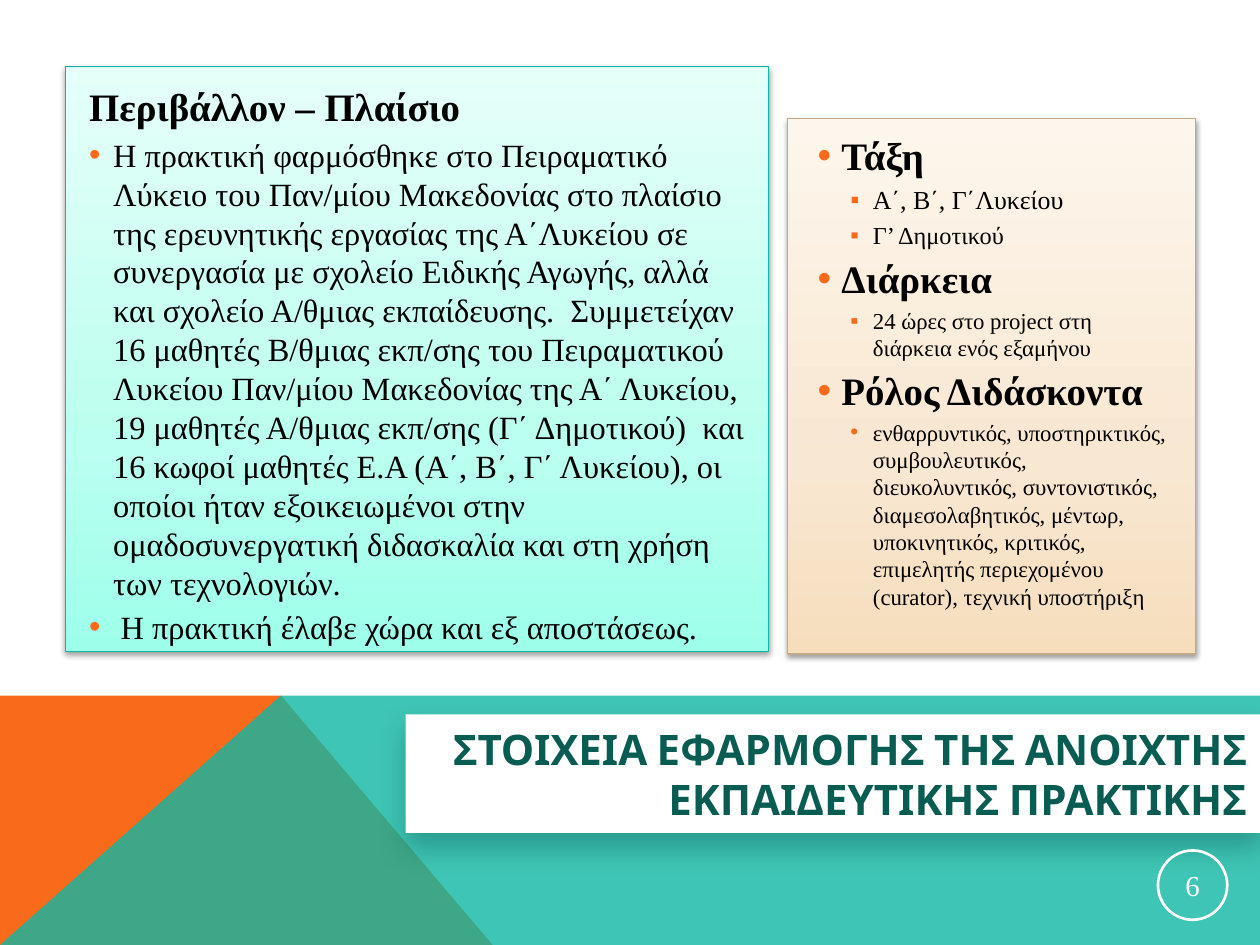
from lxml import etree
from pptx import Presentation
from pptx.dml.color import RGBColor
from pptx.enum.shapes import MSO_SHAPE
from pptx.enum.text import MSO_ANCHOR, PP_ALIGN
from pptx.oxml import parse_xml
from pptx.oxml.ns import nsdecls, qn
from pptx.util import Inches, Pt

RECTANGLE, OVAL = MSO_SHAPE.RECTANGLE, MSO_SHAPE.OVAL
MIDDLE, TOP = MSO_ANCHOR.MIDDLE, MSO_ANCHOR.TOP
LEFT, CENTER, RIGHT = PP_ALIGN.LEFT, PP_ALIGN.CENTER, PP_ALIGN.RIGHT
COLORS = {
    "orange": "F96A1B", "teal": "10B7A3", "teal line": "0CB7A3", "dark teal": "085C52",
    "sand line": "BFA989", "white": "FFFFFF", "black": "000000",
}
MINT = ("9DFFEA", "BAFFEF", "E5FFF9")
SAND = ("F6DEBD", "F8E7D1", "FDF6EC")
SERIF, SANS = "Times New Roman", "Cabin"

presentation = Presentation()
presentation.slide_width, presentation.slide_height = Inches(10), Inches(7.5)
slide = presentation.slides.add_slide(presentation.slide_layouts[6])
# Grid of 100 columns by 75 rows
column = presentation.slide_width // 100
row = presentation.slide_height // 75


def add_block(kind, left, top, width, height, fill=None, line=None, line_width=0.75, shadow=None):
    """Add a shape on the grid; fill is a colour name or gradient stops from the bottom up,
    shadow is (colour name, opacity in percent, blur in points, distance in points)."""
    shape = slide.shapes.add_shape(
        kind, int(left * column), int(top * row), int(width * column), int(height * row))
    shape.shadow.inherit = False
    if isinstance(fill, tuple):
        stops = "".join(
            f'<a:gs pos="{position}000"><a:srgbClr val="{color}"/></a:gs>'
            for position, color in zip((0, 35, 100), fill))
        shape._element.spPr.find(qn("a:prstGeom")).addnext(parse_xml(
            f'<a:gradFill {nsdecls("a")} rotWithShape="1"><a:gsLst>{stops}</a:gsLst>'
            '<a:lin ang="16200000" scaled="0"/></a:gradFill>'))
    elif fill:
        shape.fill.solid()
        shape.fill.fore_color.rgb = RGBColor.from_string(COLORS[fill])
    else:
        shape.fill.background()
    if line:
        shape.line.color.rgb = RGBColor.from_string(COLORS[line])
        shape.line.width = Pt(line_width)
    else:
        shape.line.fill.background()
    if shadow:
        color, opacity, blur, distance = shadow
        shape._element.spPr.find(qn("a:effectLst")).append(parse_xml(
            f'<a:outerShdw {nsdecls("a")} blurRad="{Pt(blur)}" dist="{Pt(distance)}" '
            f'dir="5400000" rotWithShape="0"><a:srgbClr val="{COLORS[color]}">'
            f'<a:alpha val="{opacity}000"/></a:srgbClr></a:outerShdw>'))
    return shape


def write(frame, text, size, bold=False, font=SERIF, color="black", align=LEFT, anchor=TOP,
          bullet=None, indent=0.0, hanging=0.0):
    """Write the next paragraph of a text frame; indents are in inches."""
    frame.word_wrap = True
    frame.vertical_anchor = anchor
    first = not frame.text
    paragraph = frame.paragraphs[0] if first else frame.add_paragraph()
    paragraph.alignment = align
    if not first:
        paragraph.space_before = Pt(3)
    if bullet:
        properties = paragraph._p.get_or_add_pPr()
        properties.set("marL", str(Inches(indent)))
        properties.set("indent", str(-Inches(hanging)))
        bullet_color = etree.SubElement(properties, qn("a:buClr"))
        etree.SubElement(bullet_color, qn("a:srgbClr"), val=COLORS["orange"])
        etree.SubElement(properties, qn("a:buFont"), typeface="Arial")
        etree.SubElement(properties, qn("a:buChar"), char=bullet)
    run = paragraph.add_run()
    run.text = text
    run.font.size, run.font.bold, run.font.name = Pt(size), bold, font
    run.font.color.rgb = RGBColor.from_string(COLORS[color])


# Coloured band along the bottom
band_top, peak = 55.2, 22.3
bands = [
    ("orange", 100, [(0, 75), (0, band_top), (peak, band_top), (39.1, 75)]),
    ("teal", 80, [(0, 75), (peak, band_top), (100, band_top), (100, 75)]),
]
for color, opacity, corners in bands:
    points = [(int(x * column), int(y * row)) for x, y in corners]
    builder = slide.shapes.build_freeform(*points[0])
    builder.add_line_segments(points[1:], close=True)
    band = builder.convert_to_shape()
    band.shadow.inherit = False
    band.line.fill.background()
    band.fill.solid()
    band.fill.fore_color.rgb = RGBColor.from_string(COLORS[color])
    if opacity < 100:
        band_color = band._element.spPr.find(qn("a:solidFill"))[0]
        etree.SubElement(band_color, qn("a:alpha"), val=f"{opacity}000")

# Panels and title
panel_shadow = ("black", 38, 3.1, 1.6)
add_block(RECTANGLE, 62.5, 9.4, 32.4, 42.5, SAND, "sand line", shadow=panel_shadow)
add_block(RECTANGLE, 5.2, 5.3, 55.8, 46.4, MINT, "teal line", shadow=panel_shadow)
title = add_block(RECTANGLE, 32.2, 56.7, 67.8, 9.4, "white", shadow=("dark teal", 40, 16, 8))
write(title.text_frame, "ΣΤΟΙΧΕΙΑ ΕΦΑΡΜΟΓΗΣ ΤΗΣ ΑΝΟΙΧΤΗΣ ΕΚΠΑΙΔΕΥΤΙΚΗΣ ΠΡΑΚΤΙΚΗΣ", 24, bold=True,
      font=SANS, color="dark teal", align=RIGHT, anchor=MIDDLE)

# Panel texts
heading = {"size": 22.2, "bold": True}
main = {"bullet": "•", "indent": 0.19, "hanging": 0.19}
detail = {"bullet": "▪", "indent": 0.44, "hanging": 0.18}
context = [
    ("Περιβάλλον – Πλαίσιο", heading),
    ("Η πρακτική φαρμόσθηκε στο Πειραματικό Λύκειο του Παν/μίου Μακεδονίας στο πλαίσιο της "
     "ερευνητικής εργασίας της Α΄Λυκείου σε συνεργασία με σχολείο Ειδικής Αγωγής, αλλά και "
     "σχολείο Α/θμιας εκπαίδευσης.  Συμμετείχαν 16 μαθητές Β/θμιας εκπ/σης του Πειραματικού "
     "Λυκείου Παν/μίου Μακεδονίας της Α΄ Λυκείου, 19 μαθητές Α/θμιας εκπ/σης "
     "(Γ΄ Δημοτικού)  και 16 κωφοί μαθητές Ε.Α (Α΄, Β΄, Γ΄ Λυκείου), οι οποίοι ήταν "
     "εξοικειωμένοι στην ομαδοσυνεργατική διδασκαλία και στη χρήση των τεχνολογιών.",
     {**main, "size": 18.5}),
    ("Η πρακτική έλαβε χώρα και εξ αποστάσεως.",
     {"bullet": "•", "indent": 0.25, "hanging": 0.25, "size": 18.5}),
]
details = [
    ("Τάξη", {**main, **heading}),
    ("Α΄, Β΄, Γ΄Λυκείου", {**detail, "size": 14.8}),
    ("Γ’ Δημοτικού", {**detail, "size": 13.9}),
    ("Διάρκεια", {**main, **heading}),
    ("24 ώρες στο project στη διάρκεια ενός εξαμήνου", {**detail, "size": 13}),
    ("Ρόλος Διδάσκοντα", {**main, **heading}),
    ("ενθαρρυντικός, υποστηρικτικός, συμβουλευτικός, διευκολυντικός, συντονιστικός, "
     "διαμεσολαβητικός, μέντωρ, υποκινητικός, κριτικός, επιμελητής περιεχομένου (curator), "
     "τεχνική υποστήριξη", {**detail, "bullet": "•", "size": 13}),
]
for (left, top, width, height), paragraphs in [
    ((6.1, 6.1, 54.2, 45.2), context),
    ((63.9, 10, 30.3, 40.6), details),
]:
    text_box = slide.shapes.add_textbox(
        int(left * column), int(top * row), int(width * column), int(height * row))
    for text, text_format in paragraphs:
        write(text_box.text_frame, text, **text_format)

# Slide number
number = add_block(OVAL, 91.9, 67.5, 5.5, 5.5, line="white", line_width=1.5)
number_frame = number.text_frame
number_frame.margin_left = number_frame.margin_right = Inches(0.01)
number_frame.margin_top = number_frame.margin_bottom = Inches(0.01)
write(number_frame, "6", 16.5, color="white", align=CENTER, anchor=MIDDLE)

presentation.save("out.pptx")
